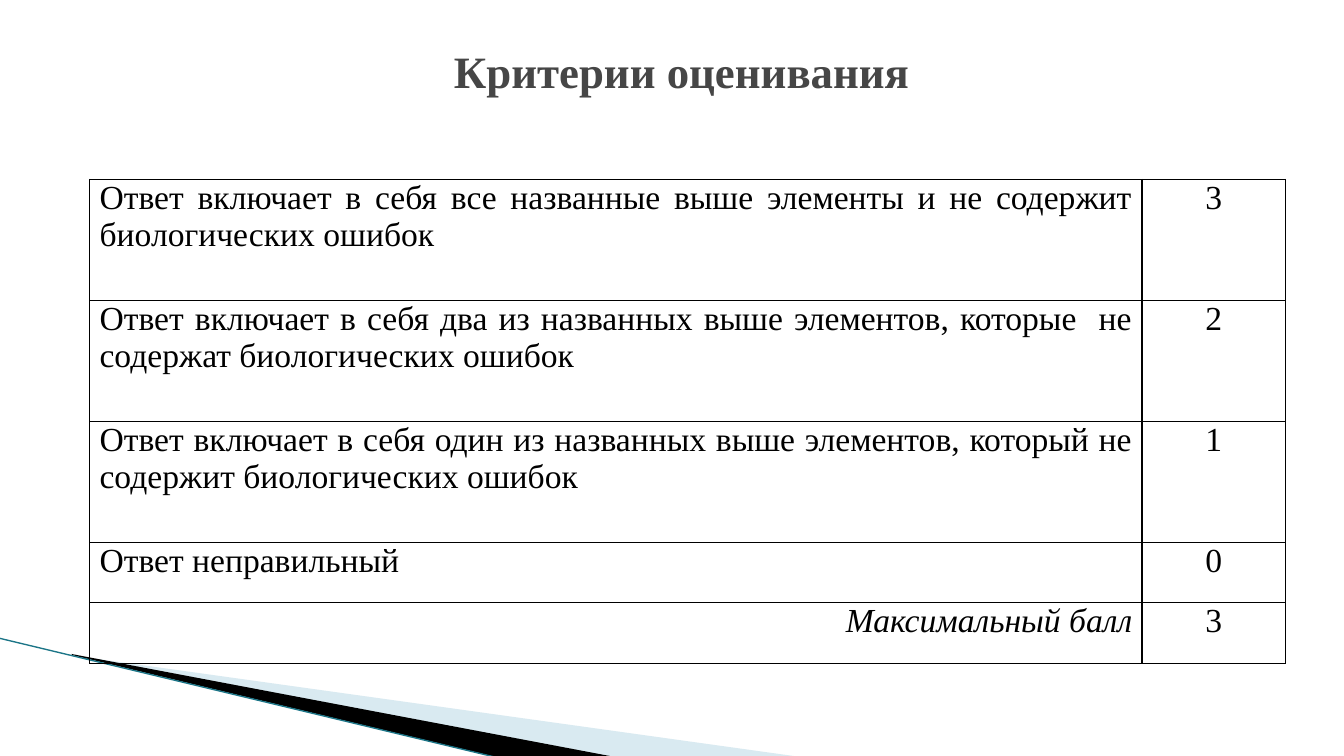
from dataclasses import dataclass

from lxml.etree import SubElement
from pptx import Presentation
from pptx.dml.color import RGBColor
from pptx.enum.shapes import MSO_CONNECTOR
from pptx.enum.text import MSO_ANCHOR, PP_ALIGN as Align
from pptx.oxml.ns import qn
from pptx.util import Cm, Pt

FONT = "Times New Roman"
BLACK = "000000"


@dataclass(frozen=True)
class Criterion:
    wording: str
    points: str
    height: float
    align: Align = Align.JUSTIFY
    italic: bool = False


@dataclass(frozen=True)
class Wedge:
    corners: tuple[tuple[float, float], ...]
    color: str
    opacity: int = 100


CRITERIA = [
    Criterion("Ответ включает в себя все названные выше элементы и не содержит биологических ошибок", "3", 3.05),
    Criterion("Ответ включает в себя два из названных выше элементов, которые  не содержат биологических ошибок", "2", 3.05),
    Criterion("Ответ включает в себя один из названных выше элементов, который не содержит биологических ошибок", "1", 3.05),
    Criterion("Ответ неправильный", "0", 1.52),
    Criterion("Максимальный балл", "3", 1.52, Align.RIGHT, True),
]
WEDGES = [
    Wedge(((1.85, 16.52), (20.14, 19.07), (15.44, 19.07)), "A0CBDC", 40),
    Wedge(((1.8, 16.48), (15.47, 19.07), (12.6, 19.1), (1.83, 16.51)), BLACK),
]


def rgb(color: str) -> RGBColor:
    return RGBColor.from_string(color)


def style_text(frame, align: Align, size: int, color: str, bold=False, italic=False) -> None:
    paragraph = frame.paragraphs[0]
    paragraph.alignment = align
    font = paragraph.runs[0].font
    font.name, font.size = FONT, Pt(size)
    font.bold, font.italic = bold, italic
    font.color.rgb = rgb(color)


def draw_wedge(slide, wedge: Wedge) -> None:
    start, *rest = [(Cm(x), Cm(y)) for x, y in wedge.corners]
    builder = slide.shapes.build_freeform(*start)
    builder.add_line_segments(rest, close=True)
    shape = builder.convert_to_shape()
    shape.shadow.inherit = False
    shape.fill.solid()
    shape.fill.fore_color.rgb = rgb(wedge.color)
    shape.line.fill.background()
    if wedge.opacity < 100:
        fill_color = shape.fill._xPr.find(".//" + qn("a:srgbClr"))
        SubElement(fill_color, qn("a:alpha"), val=str(wedge.opacity * 1000))


def draw_edge_line(slide) -> None:
    edge = slide.shapes.add_connector(
        MSO_CONNECTOR.STRAIGHT, Cm(-0.03), Cm(16.08), Cm(12.57), Cm(19.1))
    edge.line.width = Pt(0.95)
    edge.line.color.rgb = rgb("1B7587")
    SubElement(edge._element.spPr, qn("a:effectLst"))


def add_borders(cell) -> None:
    properties = cell._tc.get_or_add_tcPr()
    for position, side in enumerate(("a:lnL", "a:lnR", "a:lnT", "a:lnB")):
        border = properties.makeelement(qn(side), {"w": str(Pt(1))})
        properties.insert(position, border)
        fill = SubElement(border, qn("a:solidFill"))
        SubElement(fill, qn("a:srgbClr"), val=BLACK)


def fill_cell(cell, wording: str, align: Align, italic: bool = False) -> None:
    cell.text_frame.text = wording
    style_text(cell.text_frame, align, 24, BLACK, italic=italic)
    cell.margin_left = cell.margin_right = Cm(0.25)
    cell.margin_top = cell.margin_bottom = 0
    cell.fill.background()
    add_borders(cell)


def draw_criteria(slide) -> None:
    total = sum(criterion.height for criterion in CRITERIA)
    table = slide.shapes.add_table(
        len(CRITERIA), 2, Cm(2.26), Cm(4.52), Cm(30.13), Cm(total)).table
    table.first_row = table.horz_banding = False
    table.columns[0].width, table.columns[1].width = Cm(26.52), Cm(3.61)
    for index, criterion in enumerate(CRITERIA):
        table.rows[index].height = Cm(criterion.height)
        fill_cell(table.cell(index, 0), criterion.wording, criterion.align, criterion.italic)
        fill_cell(table.cell(index, 1), criterion.points, Align.CENTER)


def draw_title(slide) -> None:
    title = slide.shapes.title
    title.left, title.top, title.width, title.height = Cm(1.7), Cm(0.76), Cm(30.96), Cm(2.03)
    title.text_frame.text = "Критерии оценивания"
    title.text_frame.vertical_anchor = MSO_ANCHOR.MIDDLE
    style_text(title.text_frame, Align.CENTER, 32, "464646", bold=True)


def main() -> None:
    presentation = Presentation()
    presentation.slide_width, presentation.slide_height = Cm(33.87), Cm(19.05)
    slide = presentation.slides.add_slide(presentation.slide_layouts[5])
    for wedge in WEDGES:
        draw_wedge(slide, wedge)
    draw_edge_line(slide)
    draw_title(slide)
    draw_criteria(slide)
    presentation.save("out.pptx")


if __name__ == "__main__":
    main()
